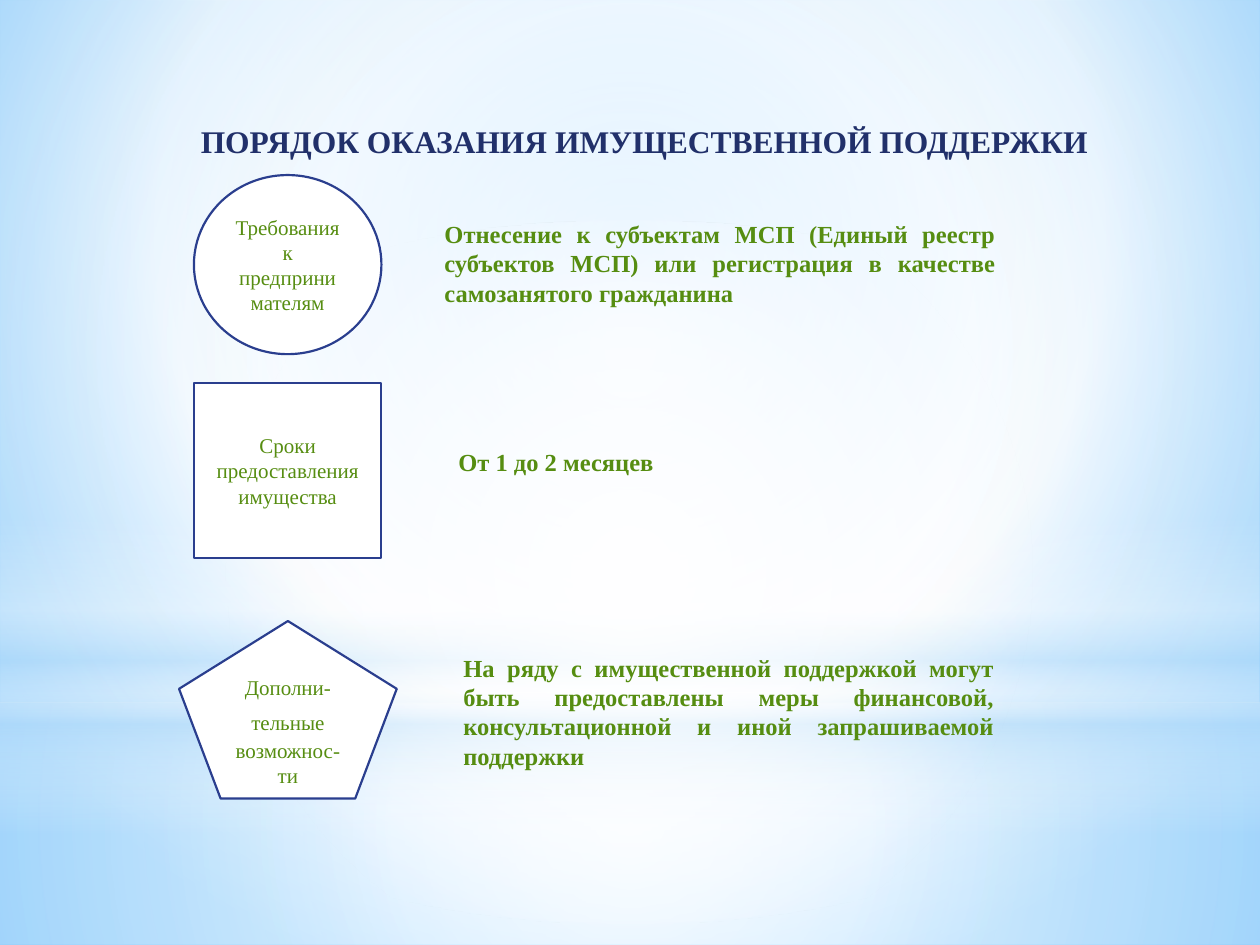
import dataclasses
import typing

import lxml.etree
import pptx
import pptx.dml.color
import pptx.enum.shapes
import pptx.enum.text
import pptx.oxml.ns
import pptx.util

Cm = pptx.util.Cm
Pt = pptx.util.Pt
qn = pptx.oxml.ns.qn
PRESET = pptx.enum.shapes.MSO_SHAPE
ALIGN = pptx.enum.text.PP_ALIGN
ANCHOR = pptx.enum.text.MSO_ANCHOR
AUTO_SIZE = pptx.enum.text.MSO_AUTO_SIZE

SERIF = "Times New Roman"
NAVY, BLUE, GREEN = "21306A", "2A3E8E", "568D11"
WHITE, SKY = "FFFFFF", "B4DCFA"
LABEL_FORMAT = {"name": SERIF, "size": Pt(12), "bold": False}
GAP_FORMAT = {"name": "Lato", "size": Pt(18), "bold": False}
ANSWER_FORMAT = {"name": SERIF, "size": Pt(14), "bold": True}
TITLE_FORMAT = {"name": SERIF, "size": Pt(18), "bold": True}


class Box(typing.NamedTuple):
    """Left, top, width and height in centimetres."""
    left: float
    top: float
    width: float
    height: float

    def lengths(self) -> list:
        return [Cm(value) for value in self]


class Stop(typing.NamedTuple):
    """Gradient stop: position and opacity in percent."""
    position: int
    color: str
    opacity: int = 100


@dataclasses.dataclass
class Backdrop:
    preset: PRESET
    box: Box
    stops: list[Stop]
    focus: tuple | None = (50, 50, 50, 50)  # None gives a vertical gradient


@dataclasses.dataclass
class Topic:
    preset: PRESET
    label_box: Box
    label: list[list[tuple[str, dict]]]
    answer_box: Box
    answer: str
    alignment: ALIGN = ALIGN.JUSTIFY


BACKGROUND_STOPS = [Stop(0, "9ED5FF"), Stop(60, WHITE), Stop(100, "5BB9FF")]
BACKDROPS = [
    Backdrop(PRESET.RECTANGLE, Box(0, 14.17, 25.4, 4.88),
             [Stop(0, WHITE, 91), Stop(37, WHITE, 76), Stop(100, SKY, 79)]),
    Backdrop(PRESET.RECTANGLE, Box(0, 0, 25.4, 14.17),
             [Stop(0, WHITE, 89), Stop(48, WHITE, 62), Stop(100, SKY, 79)]),
    Backdrop(PRESET.RECTANGLE, Box(0, 10.46, 25.4, 6.35),
             [Stop(0, WHITE, 0), Stop(29, WHITE, 30), Stop(45, SKY, 40),
              Stop(55, WHITE, 26), Stop(65, SKY, 60), Stop(100, WHITE, 0)], None),
    Backdrop(PRESET.OVAL, Box(0, 4.44, 25.4, 14.17),
             [Stop(0, WHITE), Stop(56, WHITE, 0)]),
]
TOPICS = [
    Topic(PRESET.OVAL, Box(3.91, 3.53, 3.78, 3.61),
          [[("Требования", LABEL_FORMAT)], [("к предпринимателям", LABEL_FORMAT)]],
          Box(8.71, 4.29, 11.61, 2.06),
          "Отнесение к субъектам МСП (Единый реестр субъектов МСП) "
          "или регистрация в качестве самозанятого гражданина"),
    Topic(PRESET.RECTANGLE, Box(3.91, 7.72, 3.78, 3.53),
          [[("Сроки предоставления имущества", LABEL_FORMAT)]],
          Box(8.99, 8.89, 11.2, 0.86), "От 1 до 2 месяцев", ALIGN.LEFT),
    Topic(PRESET.REGULAR_PENTAGON, Box(3.61, 12.52, 4.39, 3.58),
          [[("Дополни-тельные", LABEL_FORMAT), (" ", GAP_FORMAT),
            ("возможнос-ти", LABEL_FORMAT)]],
          Box(9.09, 13.03, 11.2, 2.64),
          "На ряду с имущественной поддержкой могут быть предоставлены меры "
          "финансовой, консультационной и иной запрашиваемой поддержки"),
]


def rgb(color: str) -> pptx.dml.color.RGBColor:
    return pptx.dml.color.RGBColor.from_string(color)


def set_gradient(properties, stops: list[Stop], focus: tuple | None) -> None:
    """Replace the solid fill in a properties element with a gradient."""
    gradient = lxml.etree.Element(qn("a:gradFill"), rotWithShape="1")
    stop_list = lxml.etree.SubElement(gradient, qn("a:gsLst"))
    for stop in stops:
        entry = lxml.etree.SubElement(stop_list, qn("a:gs"), pos=str(stop.position * 1000))
        color = lxml.etree.SubElement(entry, qn("a:srgbClr"), val=stop.color)
        if stop.opacity < 100:
            lxml.etree.SubElement(color, qn("a:alpha"), val=str(stop.opacity * 1000))
    if focus is None:
        lxml.etree.SubElement(gradient, qn("a:lin"), ang="5400000", scaled="0")
    else:
        circle = lxml.etree.SubElement(gradient, qn("a:path"), {"path": "circle"})
        edges = {side: str(value * 1000) for side, value in zip("ltrb", focus)}
        lxml.etree.SubElement(circle, qn("a:fillToRect"), edges)
    properties.replace(properties.find(qn("a:solidFill")), gradient)


def write(frame, paragraphs: list, alignment: ALIGN, color: str, anchor: ANCHOR) -> None:
    frame.word_wrap = True
    frame.vertical_anchor = anchor
    for index, runs in enumerate(paragraphs):
        paragraph = frame.add_paragraph() if index else frame.paragraphs[0]
        paragraph.alignment = alignment
        for text, font_format in runs:
            run = paragraph.add_run()
            run.text = text
            run.font.color.rgb = rgb(color)
            for name, value in font_format.items():
                setattr(run.font, name, value)


def add_plain_shape(slide, preset: PRESET, box: Box):
    shape = slide.shapes.add_shape(preset, *box.lengths())
    shape.shadow.inherit = False
    shape.fill.solid()
    shape.fill.fore_color.rgb = rgb(WHITE)
    return shape


def add_backdrop(slide, backdrop: Backdrop) -> None:
    shape = add_plain_shape(slide, backdrop.preset, backdrop.box)
    shape.line.fill.background()
    set_gradient(shape._element.spPr, backdrop.stops, backdrop.focus)


def place_title(slide, text: str, box: Box) -> None:
    title = slide.shapes.title
    title.left, title.top, title.width, title.height = box.lengths()
    title.text_frame.auto_size = AUTO_SIZE.SHAPE_TO_FIT_TEXT
    write(title.text_frame, [[(text, TITLE_FORMAT)]], ALIGN.CENTER, NAVY, ANCHOR.TOP)
    # Bring the title in front of the backdrops
    slide.shapes._spTree.append(title._element)


def add_topic(slide, topic: Topic) -> None:
    shape = add_plain_shape(slide, topic.preset, topic.label_box)
    shape.line.color.rgb = rgb(BLUE)
    shape.line.width = Pt(1.25)
    write(shape.text_frame, topic.label, ALIGN.CENTER, GREEN, ANCHOR.MIDDLE)

    answer = slide.shapes.add_textbox(*topic.answer_box.lengths())
    answer.text_frame.auto_size = AUTO_SIZE.SHAPE_TO_FIT_TEXT
    write(answer.text_frame, [[(topic.answer, ANSWER_FORMAT)]],
          topic.alignment, GREEN, ANCHOR.TOP)


def main() -> None:
    presentation = pptx.Presentation()
    presentation.slide_width, presentation.slide_height = Cm(25.4), Cm(19.05)
    slide = presentation.slides.add_slide(presentation.slide_layouts.get_by_name("Title Only"))

    # Background and soft light layers
    slide.background.fill.solid()
    background = slide._element.find(".//" + qn("p:bgPr"))
    set_gradient(background, BACKGROUND_STOPS, (20, 10, 20, 60))
    for backdrop in BACKDROPS:
        add_backdrop(slide, backdrop)

    # Title, then each topic with its answer
    place_title(slide, "ПОРЯДОК ОКАЗАНИЯ ИМУЩЕСТВЕННОЙ ПОДДЕРЖКИ",
                Box(2.9, 2.34, 20.19, 1.02))
    for topic in TOPICS:
        add_topic(slide, topic)

    presentation.save("out.pptx")


if __name__ == "__main__":
    main()
